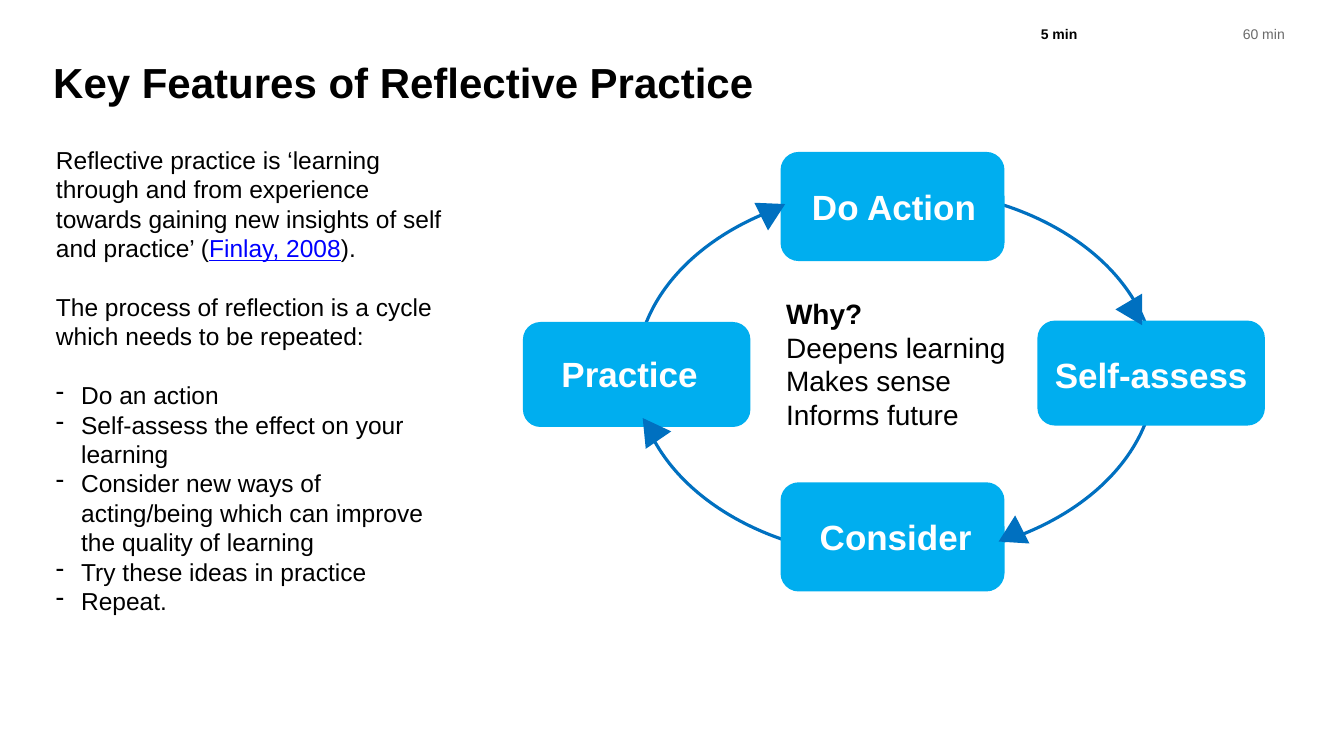
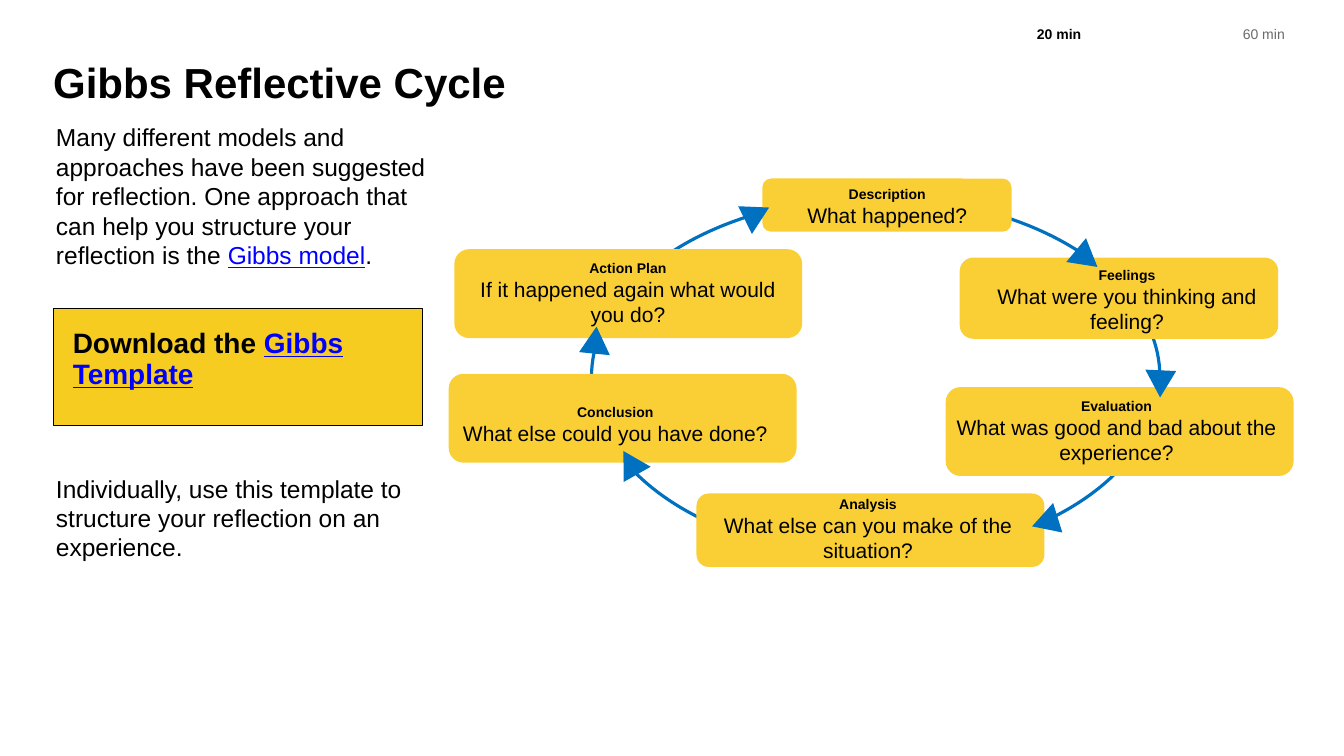
from lxml import etree
from pptx import Presentation
from pptx import util as u
from pptx.dml.color import RGBColor
from pptx.enum import shapes, text
from pptx.oxml.ns import qn

COLORS = {
    "ink": "000000",
    "muted": "6A6A6A",
    "paper": "FFFFFF",
    "link": "0000FF",
    "cycle": "0070C0",
    "practice": "00AEEF",
    "gibbs": "FACF35",
    "download": "F6CC20",
}
FONT = "Arial"
INSET = 4
BODY_SIZE = 35
STEP_SIZE = 50
BODY_PITCH = 1.2
ARROW_WIDTH, ARROW_HEIGHT = 45, 38
LEFT, CENTER = text.PP_ALIGN.LEFT, text.PP_ALIGN.CENTER
TOP, MIDDLE = text.MSO_ANCHOR.TOP, text.MSO_ANCHOR.MIDDLE
SHAPE = shapes.MSO_SHAPE


def points(values):
    return [u.Pt(value) for value in values]


def rgb(name):
    return RGBColor.from_string(COLORS[name])


def write(frame, *pieces, size=BODY_SIZE, bold=False, color="ink", align=LEFT,
          before=0, bullet=None, pitch=BODY_PITCH):
    """Write one paragraph whose every second piece is styled as a link."""
    started = frame.paragraphs[0].runs
    paragraph = frame.add_paragraph() if started else frame.paragraphs[0]
    paragraph.alignment = align
    paragraph.line_spacing = u.Pt(round(size * pitch, 2))
    if before:
        paragraph.space_before = u.Pt(before)
    if bullet:
        properties = paragraph._p.get_or_add_pPr()
        properties.set("marL", str(u.Pt(36)))
        properties.set("indent", str(u.Pt(-36)))
        etree.SubElement(properties, qn("a:buChar")).set("char", bullet)
    for index, piece in enumerate(pieces):
        is_link = index % 2 == 1
        run = paragraph.add_run()
        run.text = piece
        run.font.name = FONT
        run.font.size = u.Pt(size)
        run.font.bold = bold
        run.font.underline = is_link
        run.font.color.rgb = rgb("link" if is_link else color)


def set_frame(frame, inset=INSET, anchor=MIDDLE, wrap=True):
    frame.word_wrap = wrap
    frame.auto_size = text.MSO_AUTO_SIZE.NONE
    frame.vertical_anchor = anchor
    frame.margin_left = frame.margin_right = u.Pt(inset)
    frame.margin_top = frame.margin_bottom = u.Pt(inset)
    return frame


def add_text(slide, place, **layout):
    return set_frame(slide.shapes.add_textbox(*points(place)).text_frame, **layout)


def add_figure(slide, kind, place, fill=None, line=None, line_width=1):
    figure = slide.shapes.add_shape(kind, *points(place))
    figure.shadow.inherit = False
    if fill:
        figure.fill.solid()
        figure.fill.fore_color.rgb = rgb(fill)
    else:
        figure.fill.background()
    if line:
        figure.line.color.rgb = rgb(line)
        figure.line.width = u.Pt(line_width)
    else:
        figure.line.fill.background()
    return figure


def add_ring(slide, place, fill=None):
    add_figure(slide, SHAPE.OVAL, place, fill, "cycle", 4.5)


def add_arrowheads(slide, arrowheads):
    for left, top, turn in arrowheads:
        place = (left, top, ARROW_WIDTH, ARROW_HEIGHT)
        add_figure(slide, SHAPE.ISOSCELES_TRIANGLE, place, "cycle").rotation = turn


def add_page(deck, heading, duration):
    slide = deck.slides.add_slide(deck.slide_layouts[5])
    title = slide.shapes.title
    title.left, title.top, title.width, title.height = points((76, 80, 1768, 76))
    set_frame(title.text_frame, inset=0, anchor=TOP)
    write(title.text_frame, heading, size=60, bold=True)
    session = add_text(slide, (1771, 32, 69, 33), wrap=False)
    write(session, "60 min", size=20, color="muted", align=CENTER)
    timer = add_text(slide, (1471, 32, 84, 33))
    write(timer, duration, size=20, bold=True, align=CENTER)
    return slide


def build_key_features(deck):
    slide = add_page(deck, "Key Features of Reflective Practice", "5 min")
    add_ring(slide, (909, 269, 741, 528), "paper")

    steps = [
        ("Do Action", (1115, 217, 320, 156), (1156, 261, 267, 68), LEFT),
        ("Self-assess", (1482, 458, 325, 150), (1503, 501, 305, 68), LEFT),
        ("Consider", (1115, 689, 320, 156), (1146, 732, 267, 68), CENTER),
        ("Practice", (747, 460, 325, 150), (747, 500, 305, 68), CENTER),
    ]
    for name, card, label, align in steps:
        add_figure(slide, SHAPE.ROUNDED_RECTANGLE, card, "practice")
        write(add_text(slide, label), name, size=STEP_SIZE, bold=True,
              color="paper", align=align)
    add_arrowheads(slide, [(908, 605, 205), (1071, 281, 303),
                           (1421, 746, 243), (1590, 423, 270)])

    definition = add_text(slide, (76, 203, 568, 856), anchor=TOP)
    line_gap = BODY_SIZE * BODY_PITCH
    write(definition, "Reflective practice is ‘learning through and from experience "
          "towards gaining new insights of self and practice’ (", "Finlay, 2008", ").")
    write(definition, "The process of reflection is a cycle which needs to be repeated:",
          before=line_gap)
    actions = [
        "Do an action",
        "Self-assess the effect on your learning",
        "Consider new ways of acting/being which can improve the quality of learning",
        "Try these ideas in practice",
        "Repeat.",
    ]
    for index, action in enumerate(actions):
        write(definition, action, bullet="-", before=0 if index else line_gap)

    reasons = add_text(slide, (1119, 419, 368, 202))
    write(reasons, "Why?", size=40, bold=True)
    for reason in ("Deepens learning", "Makes sense", "Informs future"):
        write(reasons, reason, size=40)


def build_gibbs_cycle(deck):
    slide = add_page(deck, "Gibbs Reflective Cycle", "20 min")
    add_ring(slide, (845, 282, 812, 513))

    stages = [
        ("Description", "What happened?",
         (1089, 255, 356, 76), (1089, 261, 357, 68)),
        ("Feelings", "What were you thinking and feeling?",
         (1371, 368, 455, 116), (1370, 376, 480, 105)),
        ("Evaluation", "What was good and bad about the experience?",
         (1351, 553, 497, 127), (1355, 563, 480, 105)),
        ("Analysis", "What else can you make of the situation?",
         (995, 705, 497, 105), (1000, 703, 480, 105)),
        ("Conclusion", "What else could you have done?",
         (641, 534, 497, 127), (639, 572, 480, 68)),
        ("Action Plan", "If it happened again what would you do?",
         (649, 356, 497, 127), (657, 366, 480, 105)),
    ]
    for name, question, card, label in stages:
        add_figure(slide, SHAPE.ROUNDED_RECTANGLE, card, "gibbs")
        prompt = add_text(slide, label)
        write(prompt, name, size=20, bold=True, align=CENTER)
        write(prompt, question, size=30, align=CENTER)
    add_arrowheads(slide, [(1048, 286, 303), (1641, 520, 62), (1481, 729, 132),
                           (878, 653, 210), (822, 476, 245), (1526, 340, 9)])

    intro = add_text(slide, (76, 171, 568, 263), anchor=TOP)
    write(intro, "Many different models and approaches have been suggested for "
          "reflection. One approach that can help you structure your "
          "reflection is the ", "Gibbs model", ".")
    download = add_figure(slide, SHAPE.RECTANGLE, (76, 441, 527, 167), "download", "ink")
    write(set_frame(download.text_frame, inset=28, anchor=TOP),
          "Download the ", "Gibbs Template", size=40, bold=True, pitch=1.1)
    task = add_text(slide, (76, 672, 568, 135))
    write(task, "Individually, use this template to structure your reflection "
          "on an experience.")


def main():
    deck = Presentation()
    deck.slide_width, deck.slide_height = points((1920, 1080))
    build_key_features(deck)
    build_gibbs_cycle(deck)
    deck.save("out.pptx")


if __name__ == "__main__":
    main()
